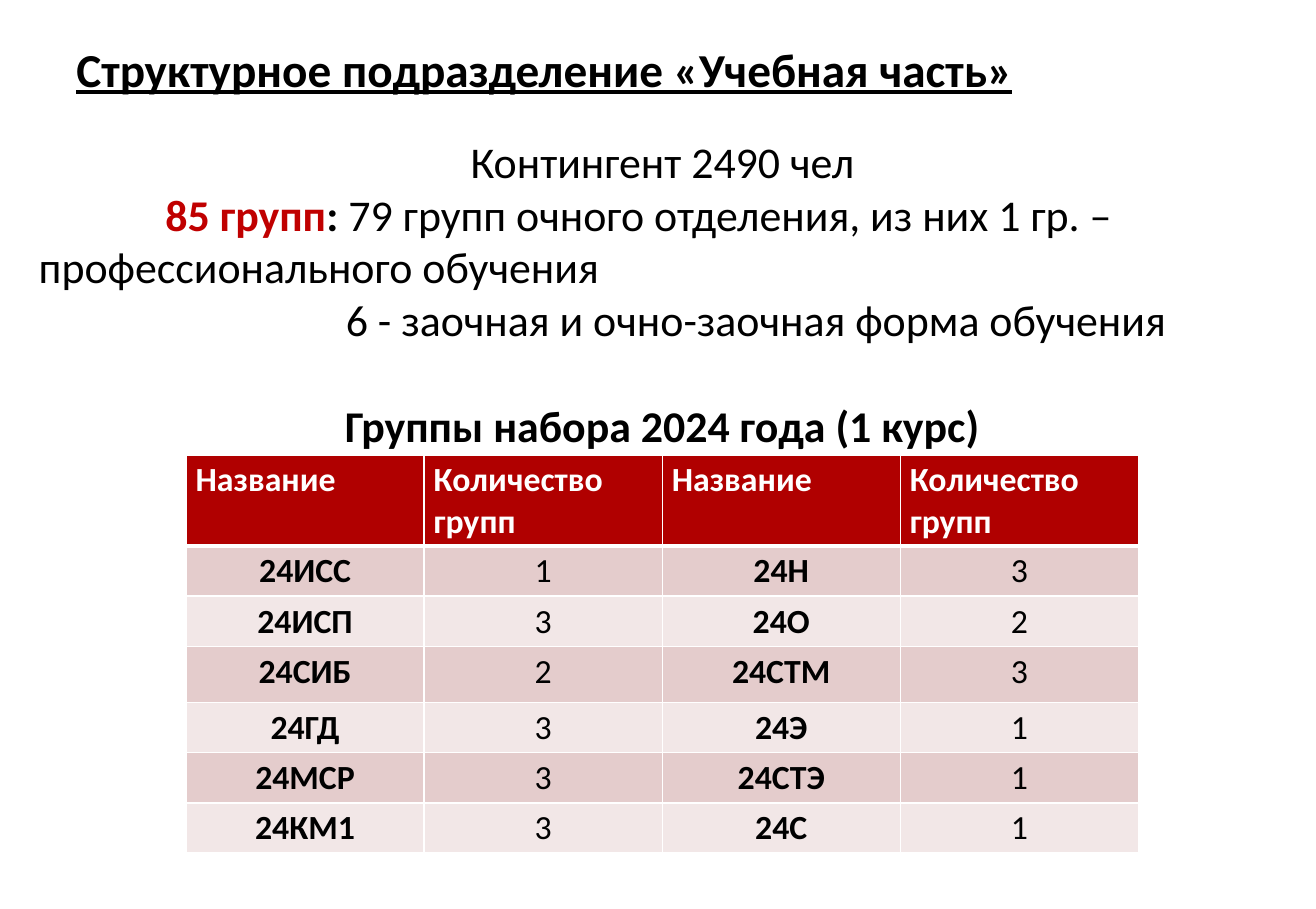
from lxml import etree
from pptx import Presentation
from pptx.dml.color import RGBColor
from pptx.enum.text import MSO_AUTO_SIZE, PP_ALIGN
from pptx.oxml.ns import qn
from pptx.util import Cm, Pt

LEFT, CENTER = PP_ALIGN.LEFT, PP_ALIGN.CENTER
GROW = MSO_AUTO_SIZE.SHAPE_TO_FIT_TEXT
BLACK = RGBColor(0x00, 0x00, 0x00)
WHITE = RGBColor(0xFF, 0xFF, 0xFF)
RED = RGBColor(0xC0, 0x00, 0x00)
HEADER_RED = RGBColor(0xB0, 0x00, 0x00)
BAND_DARK = RGBColor(0xE4, 0xCC, 0xCC)
BAND_LIGHT = RGBColor(0xF2, 0xE7, 0xE7)
FONT = "Calibri"

HEADER = ["Название", "Количество групп"] * 2
GROUPS = [
    ["24ИСС", "1", "24Н", "3"],
    ["24ИСП", "3", "24О", "2"],
    ["24СИБ", "2", "24СТМ", "3"],
    ["24ГД", "3", "24Э", "1"],
    ["24МСР", "3", "24СТЭ", "1"],
    ["24КМ1", "3", "24С", "1"],
]
ROW_HEIGHTS = [1.9, 1.05, 1.05, 1.17, 1.05, 1.05, 1.05]


def add_run(paragraph, text, size, color=BLACK, bold=False, underline=None):
    run = paragraph.add_run()
    run.text = text
    font = run.font
    font.name, font.size, font.bold = FONT, Pt(size), bold
    font.underline = underline
    font.color.rgb = color


def add_text_frame(slide, left, top, width, height):
    frame = slide.shapes.add_textbox(Cm(left), Cm(top), Cm(width), Cm(height)).text_frame
    frame.word_wrap = True
    frame.auto_size = GROW
    return frame


def add_title(slide, left, top, width, height):
    title = add_text_frame(slide, left, top, width, height).paragraphs[0]
    add_run(title, "Структурное подразделение «Учебная часть»", 28, bold=True, underline=True)


def add_summary(slide, left, top, width, height):
    lines = [
        (CENTER, 0, 0, [("Контингент 2490 чел", BLACK, False)]),
        (LEFT, 2.65, 0, [
            ("85 групп", RED, True),
            (": ", BLACK, True),
            ("79 групп очного отделения, из них 1 гр. – профессионального обучения", BLACK, False),
        ]),
        (LEFT, 6.42, 0, [("6 - заочная и очно-заочная форма обучения", BLACK, False)]),
        (CENTER, 0, 31.7, [("Группы набора 2024 года (1 курс)", BLACK, True)]),
    ]
    frame = add_text_frame(slide, left, top, width, height)
    for index, (alignment, indent, gap, runs) in enumerate(lines):
        paragraph = frame.add_paragraph() if index else frame.paragraphs[0]
        paragraph.alignment = alignment
        paragraph.space_before = Pt(gap)
        paragraph._p.get_or_add_pPr().set("indent", str(Cm(indent)))
        for text, color, bold in runs:
            add_run(paragraph, text, 26, color, bold)


def set_borders(cell, top, bottom):
    properties = cell._tc.get_or_add_tcPr()
    for side, points in (("L", 1), ("R", 1), ("T", top), ("B", bottom)):
        border = etree.SubElement(properties, qn(f"a:ln{side}"), w=str(Pt(points)))
        fill = etree.SubElement(border, qn("a:solidFill"))
        etree.SubElement(fill, qn("a:srgbClr"), val=str(WHITE))


def add_groups_table(slide, left, top, width):
    rows = [HEADER] + GROUPS
    table = slide.shapes.add_table(
        len(rows), len(HEADER), Cm(left), Cm(top), Cm(width), Cm(sum(ROW_HEIGHTS))
    ).table
    for column in table.columns:
        column.width = Cm(width / len(HEADER))
    for r, (values, height) in enumerate(zip(rows, ROW_HEIGHTS)):
        table.rows[r].height = Cm(height)
        is_header = r == 0
        band = HEADER_RED if is_header else (BAND_LIGHT, BAND_DARK)[r % 2]
        for c, value in enumerate(values):
            cell = table.cell(r, c)
            cell.margin_left = cell.margin_right = Cm(0.2)
            cell.margin_top = cell.margin_bottom = Cm(0.1)
            set_borders(cell, 3 if r == 1 else 1, 3 if is_header else 1)
            cell.fill.solid()
            cell.fill.fore_color.rgb = band
            paragraph = cell.text_frame.paragraphs[0]
            paragraph.alignment = LEFT if is_header else CENTER
            add_run(paragraph, value, 20, WHITE if is_header else BLACK,
                    is_header or c % 2 == 0)


def main():
    presentation = Presentation()
    presentation.slide_width = Cm(27.51)
    presentation.slide_height = Cm(19)
    slide = presentation.slides.add_slide(presentation.slide_layouts[6])
    add_summary(slide, 0.56, 2.69, 26.59, 7.54)
    add_groups_table(slide, 3.89, 9.51, 19.91)
    add_title(slide, 1.35, 0.71, 24.41, 1.45)
    presentation.save("out.pptx")


if __name__ == "__main__":
    main()
